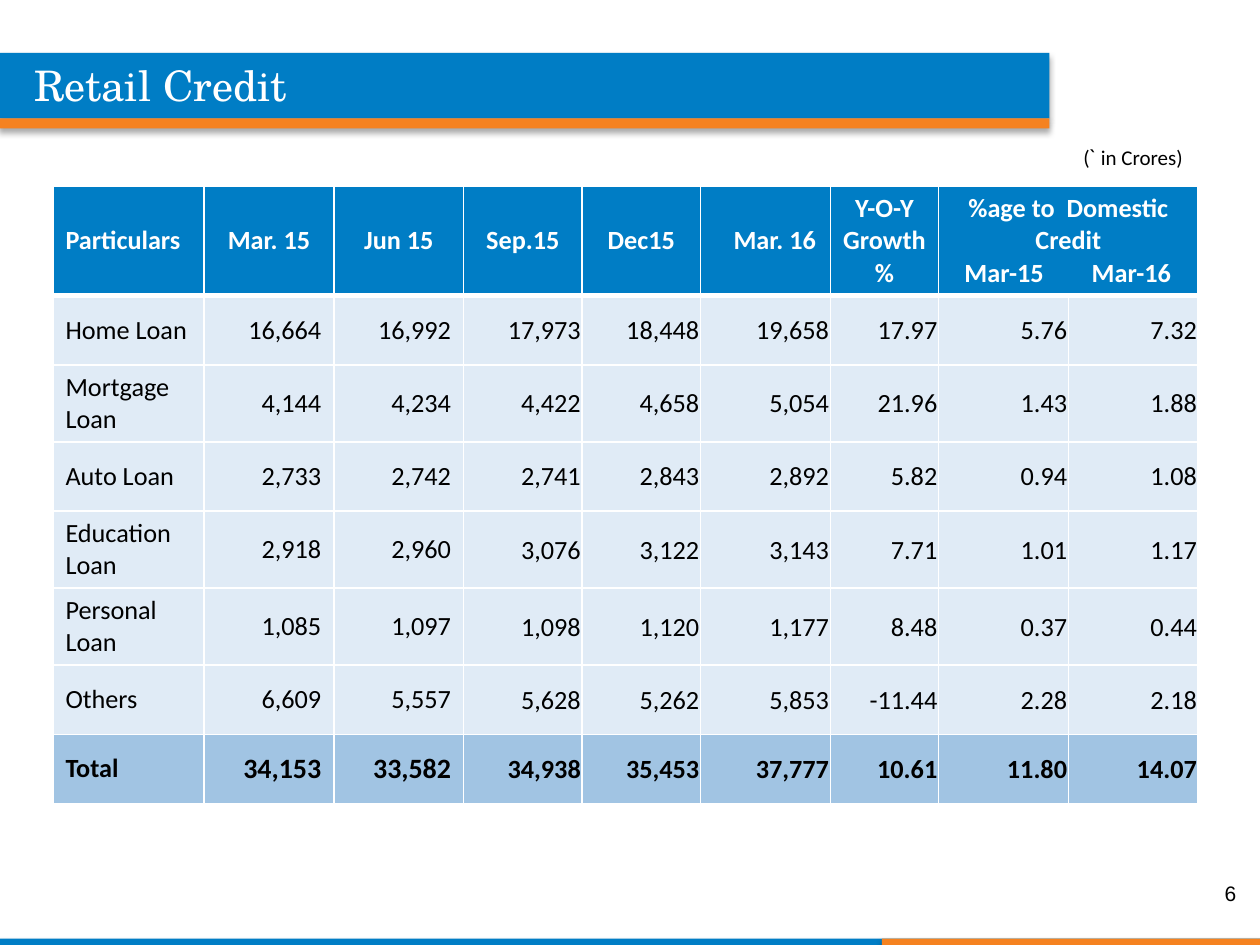
from dataclasses import dataclass

from lxml.etree import SubElement
from pptx import Presentation
from pptx.dml.color import RGBColor
from pptx.enum.shapes import MSO_SHAPE
from pptx.enum.text import MSO_ANCHOR as Anchor, PP_ALIGN as Align
from pptx.oxml import parse_xml
from pptx.oxml.ns import nsdecls, qn
from pptx.util import Inches, Pt


@dataclass(frozen=True)
class Theme:
    blue: str = "007DC5"
    orange: str = "F58220"
    body_fill: str = "E0EBF6"
    total_fill: str = "A1C4E3"
    white: str = "FFFFFF"
    black: str = "000000"
    title_font: str = "TeX Gyre Schola"
    body_font: str = "Calibri"
    symbol_font: str = "Roboto"
    number_font: str = "Arial"
    title_size: float = 24
    table_size: float = 15
    total_size: float = 16
    small_size: float = 12


THEME = Theme()

COLUMN_WIDTHS = [1.2, 1.03, 1.03, 0.94, 0.94, 1.03, 0.86, 1.03, 1.03]
HEADER_HEIGHT, ROW_HEIGHT, TWO_LINE_HEIGHT = 0.86, 0.55, 0.61
HEADERS = ["Particulars", "Mar. 15", "Jun 15", "Sep.15", "Dec15", "Mar. 16",
           "Y-O-Y\nGrowth %", "%age to  Domestic Credit\n\tMar-15\tMar-16"]
ROWS = [
    ["Home Loan", "16,664", "16,992", "17,973", "18,448", "19,658", "17.97", "5.76", "7.32"],
    ["Mortgage Loan", "4,144", "4,234", "4,422", "4,658", "5,054", "21.96", "1.43", "1.88"],
    ["Auto Loan", "2,733", "2,742", "2,741", "2,843", "2,892", "5.82", "0.94", "1.08"],
    ["Education Loan", "2,918", "2,960", "3,076", "3,122", "3,143", "7.71", "1.01", "1.17"],
    ["Personal Loan", "1,085", "1,097", "1,098", "1,120", "1,177", "8.48", "0.37", "0.44"],
    ["Others", "6,609", "5,557", "5,628", "5,262", "5,853", "-11.44", "2.28", "2.18"],
    ["Total", "34,153", "33,582", "34,938", "35,453", "37,777", "10.61", "11.80", "14.07"],
]
TWO_LINE_LABELS = {"Mortgage Loan", "Education Loan", "Personal Loan"}

# Cell margins: left, top, right, bottom
LABEL_MARGINS = (0.1, 0.05, 0.1, 0.05)
PADDED_MARGINS = (0.2, 0.1, 0.1, 0.1)
TIGHT_MARGINS = (0.01, 0.01, 0.01, 0)
SHIFTED_MARGINS = (0.2, 0.05, 0.05, 0.05)


def write_text(frame, text, *, size, color, font=THEME.body_font, bold=False,
               align=Align.LEFT, tabs=()):
    """Write text, one paragraph per line; a line opening with a tab uses centred tab stops."""
    for index, line in enumerate(text.split("\n")):
        paragraph = frame.paragraphs[0] if index == 0 else frame.add_paragraph()
        paragraph.alignment = align
        if line.startswith("\t"):
            paragraph.alignment = Align.LEFT
            tab_list = SubElement(paragraph._p.get_or_add_pPr(), qn("a:tabLst"))
            for position in tabs:
                SubElement(tab_list, qn("a:tab"), pos=str(Inches(position)), algn="ctr")
        add_run(paragraph, line, size=size, color=color, font=font, bold=bold)


def add_run(paragraph, text, *, size, color, font, bold=False):
    run = paragraph.add_run()
    run.text = text
    run.font.name = font
    run.font.size = Pt(size)
    run.font.bold = bold
    run.font.color.rgb = RGBColor.from_string(color)


def add_bar(slide, left, top, width, height, color):
    """Add a borderless bar with a soft shadow below it."""
    bar = slide.shapes.add_shape(MSO_SHAPE.RECTANGLE, Inches(left), Inches(top),
                                 Inches(width), Inches(height))
    bar.fill.solid()
    bar.fill.fore_color.rgb = RGBColor.from_string(color)
    bar.line.fill.background()
    bar.shadow.inherit = False
    effects = bar.element.spPr.find(qn("a:effectLst"))
    effects.append(parse_xml(
        f'<a:outerShdw {nsdecls("a")} blurRad="{Pt(3.5)}" dist="{Pt(2.2)}" dir="5400000" '
        f'rotWithShape="0"><a:srgbClr val="{THEME.black}"><a:alpha val="32000"/></a:srgbClr>'
        '</a:outerShdw>'))


def add_text_box(slide, left, top, width, height):
    box = slide.shapes.add_textbox(Inches(left), Inches(top), Inches(width), Inches(height))
    box.text_frame.word_wrap = True
    return box.text_frame


def add_title_band(slide, left, top, width, height):
    stripe = 0.08
    blue_height = height - stripe
    add_bar(slide, left, top, width, blue_height, THEME.blue)
    add_bar(slide, left, top + blue_height, width, stripe, THEME.orange)
    title = slide.shapes.title
    title.left, title.top = Inches(left + 0.17), Inches(top)
    title.width, title.height = Inches(6.75), Inches(0.5)
    frame = title.text_frame
    frame.word_wrap = True
    frame.vertical_anchor = Anchor.MIDDLE
    write_text(frame, "Retail Credit", size=THEME.title_size, color=THEME.white,
               font=THEME.title_font)
    title.element.getparent().append(title.element)  # bring in front of the band


def add_unit_note(slide, left, top, width, height):
    paragraph = add_text_box(slide, left, top, width, height).paragraphs[0]
    for text, font in (("(", THEME.body_font), ("`", THEME.symbol_font),
                       (" in Crores)", THEME.body_font)):
        add_run(paragraph, text, size=THEME.small_size, color=THEME.black, font=font)


def format_cell(cell, fill, margins, bottom_border=1):
    cell.vertical_anchor = Anchor.MIDDLE
    cell.margin_left, cell.margin_top, cell.margin_right, cell.margin_bottom = map(Inches, margins)
    properties = cell._tc.get_or_add_tcPr()
    for side in "LRTB":
        width = bottom_border if side == "B" else 1
        properties.append(parse_xml(
            f'<a:ln{side} {nsdecls("a")} w="{Pt(width)}"><a:solidFill>'
            f'<a:srgbClr val="{THEME.white}"/></a:solidFill></a:ln{side}>'))
    cell.fill.solid()
    cell.fill.fore_color.rgb = RGBColor.from_string(fill)


def fill_header(table):
    last = len(HEADERS) - 1
    table.cell(0, last).merge(table.cell(0, last + 1))
    for column in range(len(COLUMN_WIDTHS)):
        margins = SHIFTED_MARGINS if HEADERS[min(column, last)] == "Mar. 16" else LABEL_MARGINS
        format_cell(table.cell(0, column), THEME.blue, margins, bottom_border=3)
    for column, text in enumerate(HEADERS):
        write_text(table.cell(0, column).text_frame, text, size=THEME.table_size,
                   color=THEME.white, bold=True, tabs=(0.42, 1.43),
                   align=Align.CENTER if column else Align.LEFT)


def fill_row(table, row, values):
    is_total = values[0] == "Total"
    for column, text in enumerate(values):
        padded = column in (1, 2)
        margins = PADDED_MARGINS if padded else TIGHT_MARGINS if column else LABEL_MARGINS
        cell = table.cell(row, column)
        format_cell(cell, THEME.total_fill if is_total else THEME.body_fill, margins)
        write_text(cell.text_frame, text, color=THEME.black, bold=is_total,
                   size=THEME.total_size if is_total and padded else THEME.table_size,
                   align=Align.RIGHT if column else Align.LEFT)


def add_credit_table(slide, left, top):
    heights = [HEADER_HEIGHT] + [TWO_LINE_HEIGHT if values[0] in TWO_LINE_LABELS else ROW_HEIGHT
                                 for values in ROWS]
    table = slide.shapes.add_table(len(heights), len(COLUMN_WIDTHS), Inches(left), Inches(top),
                                   Inches(sum(COLUMN_WIDTHS)), Inches(sum(heights))).table
    table.horz_banding = False
    for column, width in zip(table.columns, COLUMN_WIDTHS):
        column.width = Inches(width)
    for row, height in zip(table.rows, heights):
        row.height = Inches(height)
    fill_header(table)
    for row, values in enumerate(ROWS, start=1):
        fill_row(table, row, values)


def add_footer(slide, left, top, width, height):
    orange_width = 3
    add_bar(slide, left, top, width, height, THEME.blue)
    add_bar(slide, left + width - orange_width, top, orange_width, height, THEME.orange)
    frame = add_text_box(slide, left + 7.58, top - 0.56, 2.33, 0.4)
    frame.vertical_anchor = Anchor.MIDDLE
    write_text(frame, "6", size=THEME.small_size, color=THEME.black,
               font=THEME.number_font, align=Align.RIGHT)


def main():
    presentation = Presentation()
    presentation.slide_width, presentation.slide_height = Inches(10), Inches(7.5)
    slide = presentation.slides.add_slide(presentation.slide_layouts[5])
    add_footer(slide, 0, 7.45, 10, 0.05)
    add_title_band(slide, 0, 0.42, 8.33, 0.6)
    add_credit_table(slide, 0.42, 1.48)
    add_unit_note(slide, 8.5, 1.1, 1.33, 0.3)
    presentation.save("out.pptx")


if __name__ == "__main__":
    main()
